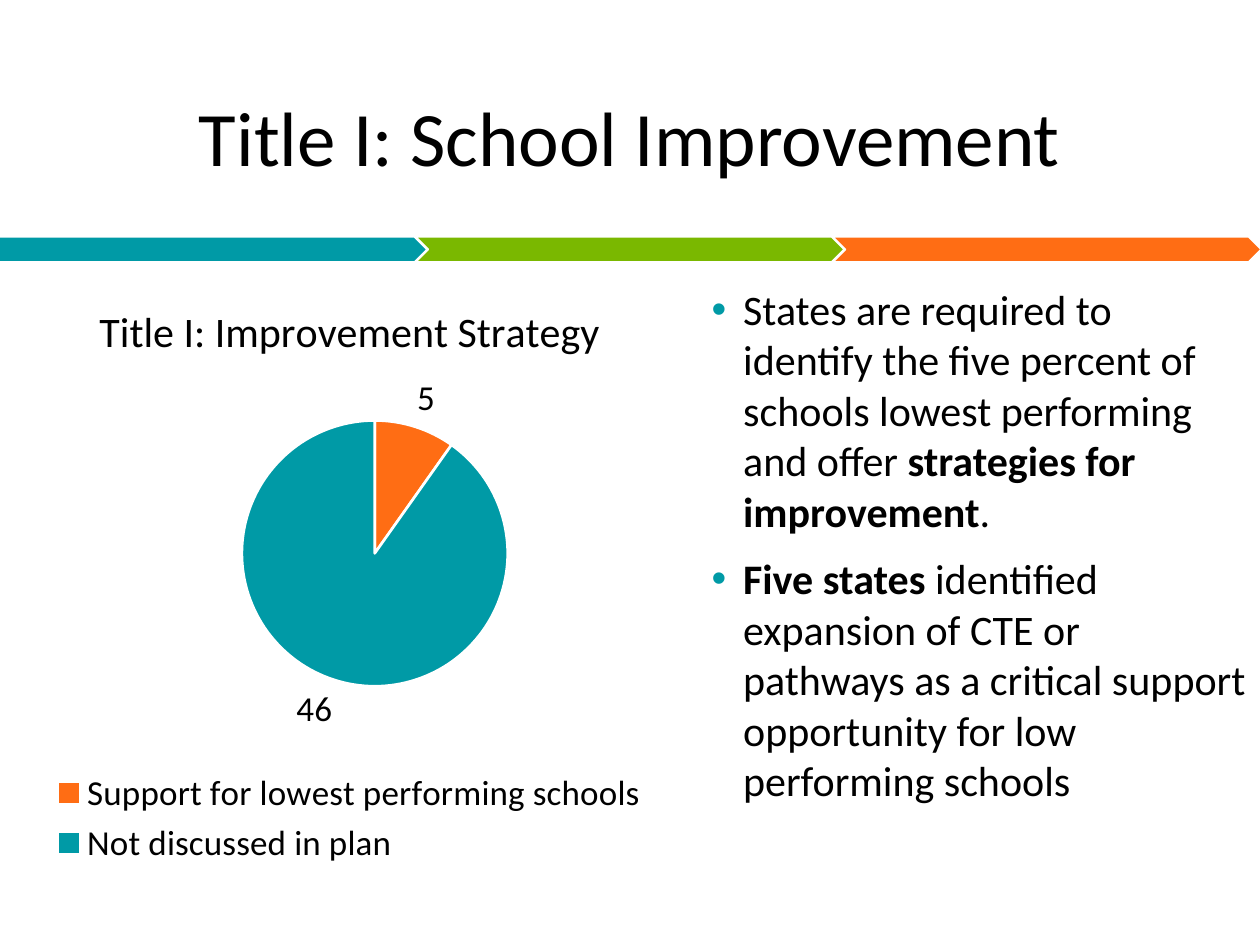
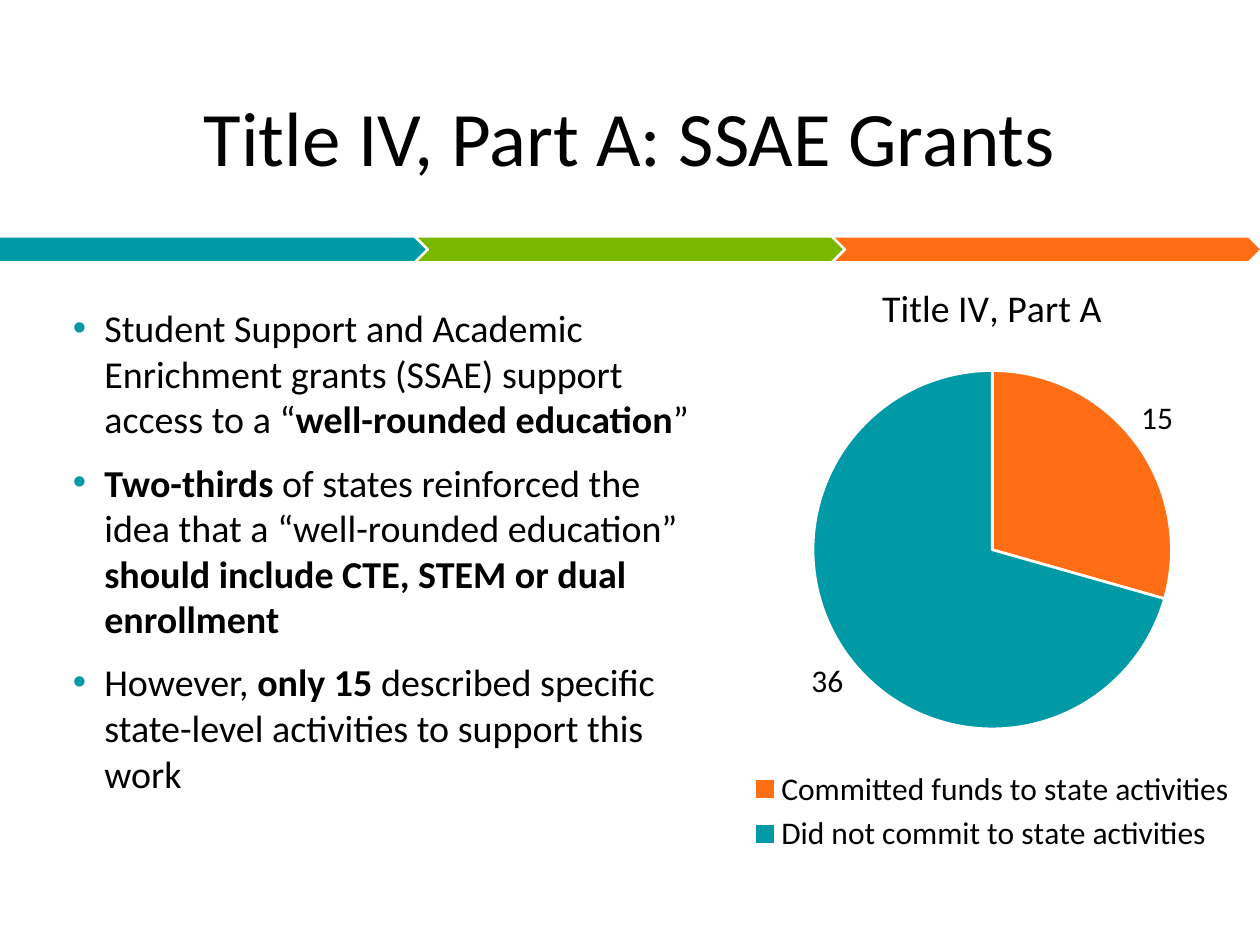
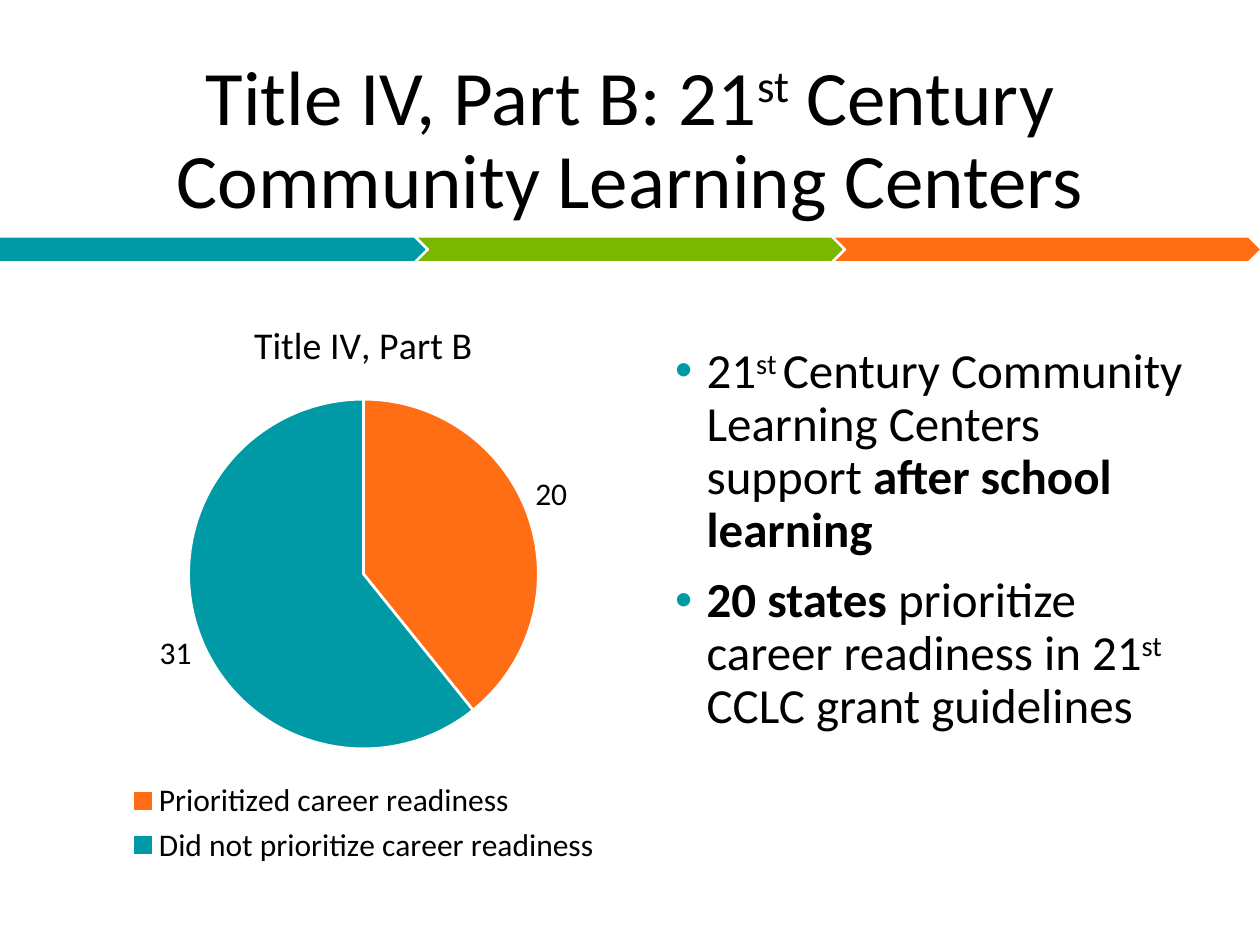
from pptx import Presentation
from pptx.chart.data import CategoryChartData as Data
from pptx.dml.color import RGBColor as RGB
from pptx.enum.chart import XL_CHART_TYPE as Kind, XL_LABEL_POSITION as Spot, XL_LEGEND_POSITION as Side
from pptx.enum.shapes import MSO_SHAPE as Shape
from pptx.enum.text import MSO_ANCHOR as Anchor, PP_ALIGN as Align
from pptx.oxml import parse_xml
from pptx.oxml.ns import nsdecls
from pptx.util import Inches, Pt

HUES = {"teal": "009AA6", "green": "7AB800", "orange": "FF6D14", "white": "FFFFFF", "black": "000000"}
BANDS = [(Shape.PENTAGON, "teal"), (Shape.CHEVRON, "green"), (Shape.CHEVRON, "orange")]
SLICES = ["orange", "teal"]


def style(font, size, bold=False):
    for key, val in {"name": "Calibri", "size": Pt(size), "bold": bold}.items():
        setattr(font, key, val)
    font.color.rgb = RGB.from_string(HUES["black"])


def write(para, parts, size):
    """Add runs; a part is text or (text, mark) with mark b for bold, s for superscript."""
    for part in parts:
        text, mark = (part, "") if isinstance(part, str) else part
        run = para.add_run()
        run.text = text
        style(run.font, size, mark == "b")
        if mark == "s":
            run._r.get_or_add_rPr().set("baseline", "30000")


# Content of each slide
PAGES = [
    {
        "title": ["Title I: School Improvement"],
        "body": {
            "box": (5.55, 2.2, 4.45, 4.58), "size": 24, "lead": None,
            "items": [
                ["States are required to identify the five percent of schools lowest performing and offer ",
                 ("strategies for improvement", "b"), "."],
                [("Five states ", "b"),
                 "identified expansion of CTE or pathways as a critical support opportunity for low performing schools"],
            ],
        },
        "pie": {
            "box": (0, 2.2, 5.55, 4.72), "size": 20, "head": "Title I: Improvement Strategy", "name": "Series 1",
            "cats": ["Support for lowest performing schools", "Not discussed in plan"], "vals": [5, 46],
            "plot": {"x": 0.345, "y": 0.241, "w": 0.382, "h": 0.447},
        },
    },
    {
        "title": ["Title IV, Part A: SSAE Grants"],
        "body": {
            "box": (0.48, 2.37, 5.27, 4.63), "size": 21.7, "lead": None,
            "items": [
                ["Student Support and Academic Enrichment grants (SSAE) support access to a “",
                 ("well-rounded education", "b"), "”"],
                [("Two-thirds ", "b"), "of states reinforced the idea that a “well-rounded education” ",
                 ("should include CTE, STEM or dual enrollment", "b")],
                ["However, ", ("only 15 ", "b"), "described specific state-level activities to support this work"],
            ],
        },
        "pie": {
            "box": (5.75, 2.03, 4.25, 4.79), "size": 18, "head": "Title IV, Part A", "name": "Series 1",
            "cats": ["Committed funds to state activities", "Did not commit to state activities"], "vals": [15, 36],
        },
    },
    {
        "title": ["Title IV, Part B: 21", ("st", "s"), " Century Community Learning Centers"],
        "body": {
            "box": (5.26, 2.7, 4.25, 3.83), "size": 28, "lead": 0.9,
            "items": [
                ["21", ("st ", "s"), "Century Community Learning Centers support ", ("after school learning", "b")],
                [("20 states ", "b"), "prioritize career readiness in 21", ("st", "s"), " CCLC grant guidelines"],
            ],
        },
        "pie": {
            "box": (0.51, 2.33, 4.75, 4.58), "size": 18, "head": "Title IV, Part B", "name": "Title IV, Part B",
            "cats": ["Prioritized career readiness", "Did not prioritize career readiness"], "vals": [20, 31],
        },
    },
]

deck = Presentation()
deck.slide_width, deck.slide_height = Inches(10), Inches(7.5)

for page in PAGES:
    slide = deck.slides.add_slide(deck.slide_layouts[6])

    # Band of three arrows
    for i, (form, hue) in enumerate(BANDS):
        band = slide.shapes.add_shape(form, Inches(-0.01 + 3.31 * i), Inches(1.88), Inches(3.4), Inches(0.2))
        band.shadow.inherit = False
        band.fill.solid()
        band.fill.fore_color.rgb = RGB.from_string(HUES[hue])
        band.line.color.rgb = RGB.from_string(HUES["white"])
        band.line.width = Pt(1)

    # Title
    frame = slide.shapes.add_textbox(Inches(0.69), Inches(0.4), Inches(8.62), Inches(1.45)).text_frame
    frame.word_wrap = True
    frame.vertical_anchor = Anchor.MIDDLE
    para = frame.paragraphs[0]
    para.alignment = Align.CENTER
    para.line_spacing = 0.9
    write(para, page["title"], 44)

    # Bullets
    body = page["body"]
    frame = slide.shapes.add_textbox(*map(Inches, body["box"])).text_frame
    frame.word_wrap = True
    for i, item in enumerate(body["items"]):
        para = frame.add_paragraph() if i else frame.paragraphs[0]
        para.line_spacing = body["lead"]
        para.space_before = Pt(10 if i else 0)
        props = para._p.get_or_add_pPr()
        props.set("marL", str(Inches(0.25)))
        props.set("indent", str(Inches(-0.25)))
        for xml in (f'<a:buClr {nsdecls("a")}><a:srgbClr val="{HUES["teal"]}"/></a:buClr>',
                    f'<a:buFont {nsdecls("a")} typeface="Arial"/>',
                    f'<a:buChar {nsdecls("a")} char="•"/>'):
            props.append(parse_xml(xml))
        write(para, item, body["size"])

    # Pie chart
    pie = page["pie"]
    data = Data()
    data.categories = pie["cats"]
    data.add_series(pie["name"], pie["vals"])
    chart = slide.shapes.add_chart(Kind.PIE, *map(Inches, pie["box"]), data).chart
    style(chart.font, pie["size"])
    chart.has_title = True
    write(chart.chart_title.text_frame.paragraphs[0], [pie["head"]], pie["size"] * 1.2)
    chart.chart_title.include_in_layout = False
    chart.has_legend = True
    chart.legend.position = Side.BOTTOM
    chart.legend.include_in_layout = False
    style(chart.legend.font, pie["size"])

    plot = chart.plots[0]
    plot.vary_by_categories = True
    plot.has_data_labels = True
    labels = plot.data_labels
    for key, val in {"show_value": True, "show_percentage": False, "position": Spot.OUTSIDE_END}.items():
        setattr(labels, key, val)
    style(labels.font, pie["size"])
    for i, hue in enumerate(SLICES):
        look = plot.series[0].points[i].format
        look.fill.solid()
        look.fill.fore_color.rgb = RGB.from_string(HUES[hue])
        look.line.color.rgb = RGB.from_string(HUES["white"])
        look.line.width = Pt(1.5)

    # Fixed plot area where one is given
    if "plot" in pie:
        area = chart._chartSpace.chart.plotArea
        for old in area.findall("{*}layout"):
            area.remove(old)
        sizes = "".join(f'<c:{key} val="{val}"/>' for key, val in pie["plot"].items())
        area.insert(0, parse_xml(
            f'<c:layout {nsdecls("c")}><c:manualLayout><c:layoutTarget val="inner"/>'
            f'<c:xMode val="edge"/><c:yMode val="edge"/>{sizes}</c:manualLayout></c:layout>'))

deck.save("out.pptx")
